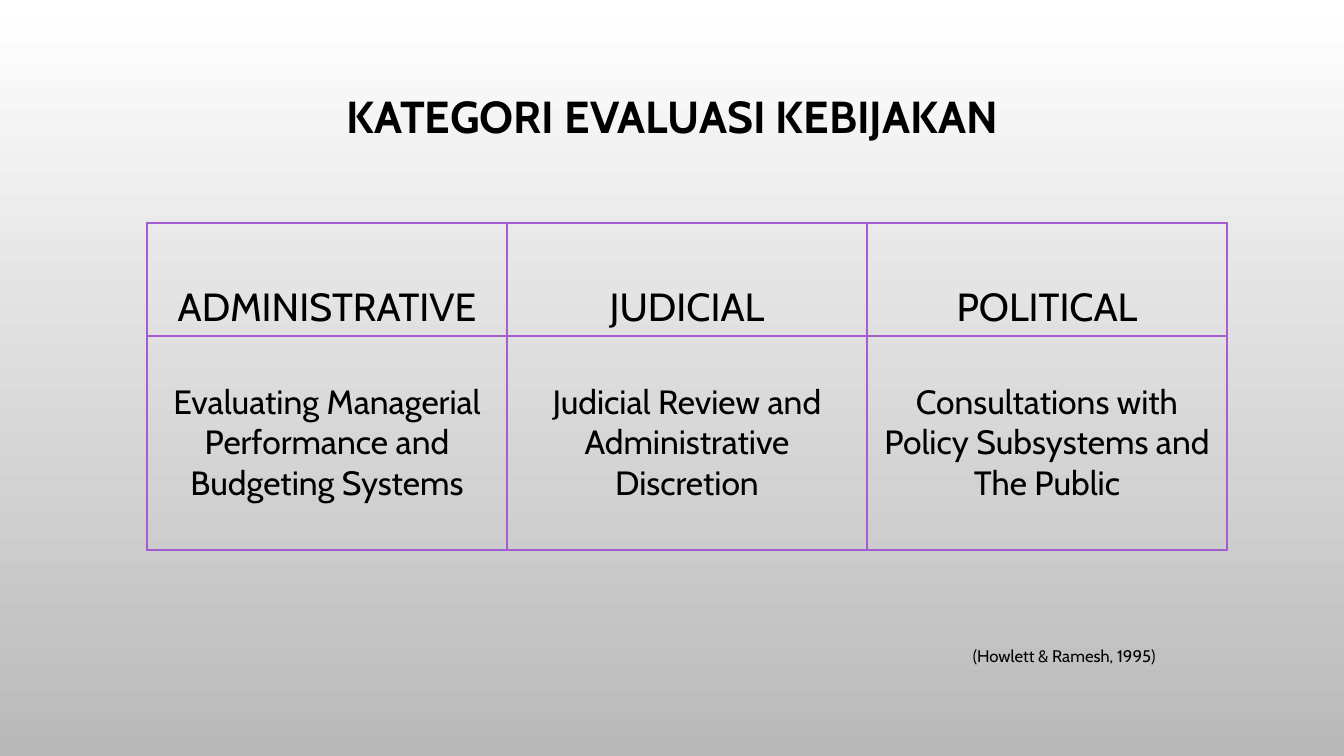
import pptx
import pptx.dml.color
import pptx.enum.text
import pptx.oxml
import pptx.oxml.ns
import pptx.util

BLACK = pptx.dml.color.RGBColor(0x00, 0x00, 0x00)
WHITE = pptx.dml.color.RGBColor(0xFF, 0xFF, 0xFF)
GREY = pptx.dml.color.RGBColor(0xB9, 0xB9, 0xB9)
PURPLE = pptx.dml.color.RGBColor(0xA3, 0x5D, 0xD1)
ALIGN = pptx.enum.text.PP_ALIGN
ANCHOR = pptx.enum.text.MSO_ANCHOR
AUTO_SIZE = pptx.enum.text.MSO_AUTO_SIZE

HEADINGS = [["ADMINISTRATIVE"], ["JUDICIAL"], ["POLITICAL"]]
DETAILS = [
    ["Evaluating Managerial Performance and Budgeting Systems"],
    ["Judicial Review and", "Administrative Discretion"],
    ["Consultations with Policy Subsystems and", "The Public"],
]


def px(n):
    """Turn whole pixels into EMU."""
    return pptx.util.Emu(round(n * 914400 / 100.8))


def write(tf, lines, size, align=ALIGN.CENTER, bold=False, spacing=None, font="Cabin", color=BLACK):
    """Fill a text frame with one paragraph per line."""
    for i, line in enumerate(lines):
        p = tf.paragraphs[0] if i == 0 else tf.add_paragraph()
        p.alignment = align
        p.line_spacing = spacing
        r = p.add_run()
        r.text = line
        r.font.name = font
        r.font.size = pptx.util.Pt(size)
        r.font.bold = bold
        r.font.color.rgb = color


class Deck:
    """Hold the presentation style and the current slide."""

    def __init__(self):
        """Open a title-only slide."""
        self.prs = pptx.Presentation()
        self.prs.slide_width = px(1344)
        self.prs.slide_height = px(756)
        self.s = self.prs.slides.add_slide(self.prs.slide_layouts[5])

    def background(self, top, bottom):
        """Shade the slide from top to bottom."""
        fill = self.s.background.fill
        fill.gradient()
        fill.gradient_angle = 270
        for stop, color in zip(fill.gradient_stops, (top, bottom)):
            stop.color.rgb = color

    def title(self, text, x, y, w, h):
        """Place the slide title."""
        sp = self.s.shapes.title
        sp.left, sp.top, sp.width, sp.height = px(x), px(y), px(w), px(h)
        tf = sp.text_frame
        tf.auto_size = AUTO_SIZE.NONE
        tf.vertical_anchor = ANCHOR.MIDDLE
        write(tf, [text], 32, bold=True, spacing=0.9)

    def border(self, cell, color):
        """Draw all four edges of a cell."""
        tcPr = cell._tc.get_or_add_tcPr()
        for edge in ("lnL", "lnR", "lnT", "lnB"):
            tcPr.append(pptx.oxml.parse_xml(
                f'<a:{edge} {pptx.oxml.ns.nsdecls("a")} w="12700"><a:solidFill>'
                f'<a:srgbClr val="{color}"/></a:solidFill></a:{edge}>'))

    def table(self, rows, x, y, col_width):
        """Add a table from (height, size, anchor, cells) rows."""
        cols = len(rows[0][3])
        height = sum(row[0] for row in rows)
        tbl = self.s.shapes.add_table(
            len(rows), cols, px(x), px(y), px(col_width * cols), px(height)).table
        tbl.first_row = tbl.horz_banding = False
        for col in tbl.columns:
            col.width = px(col_width)
        for i, (row_height, size, anchor, cells) in enumerate(rows):
            tbl.rows[i].height = px(row_height)
            for j, lines in enumerate(cells):
                cell = tbl.cell(i, j)
                cell.vertical_anchor = anchor
                self.border(cell, PURPLE)
                cell.fill.background()
                write(cell.text_frame, lines, size)

    def caption(self, text, x, y, w, h):
        """Add a small unwrapped text box."""
        tf = self.s.shapes.add_textbox(px(x), px(y), px(w), px(h)).text_frame
        tf.word_wrap = False
        tf.auto_size = AUTO_SIZE.SHAPE_TO_FIT_TEXT
        write(tf, [text], 12, align=ALIGN.LEFT)


def main():
    """Build and save the slide."""
    deck = Deck()
    deck.background(WHITE, GREY)
    deck.title("KATEGORI EVALUASI KEBIJAKAN", 244, 94, 857, 50)
    deck.table([
        (113, 28, ANCHOR.BOTTOM, HEADINGS),
        (214, 24, ANCHOR.MIDDLE, DETAILS),
    ], 147, 223, 360)
    deck.caption("(Howlett & Ramesh, 1995)", 963, 641, 241, 30)
    deck.prs.save("out.pptx")


if __name__ == "__main__":
    main()
